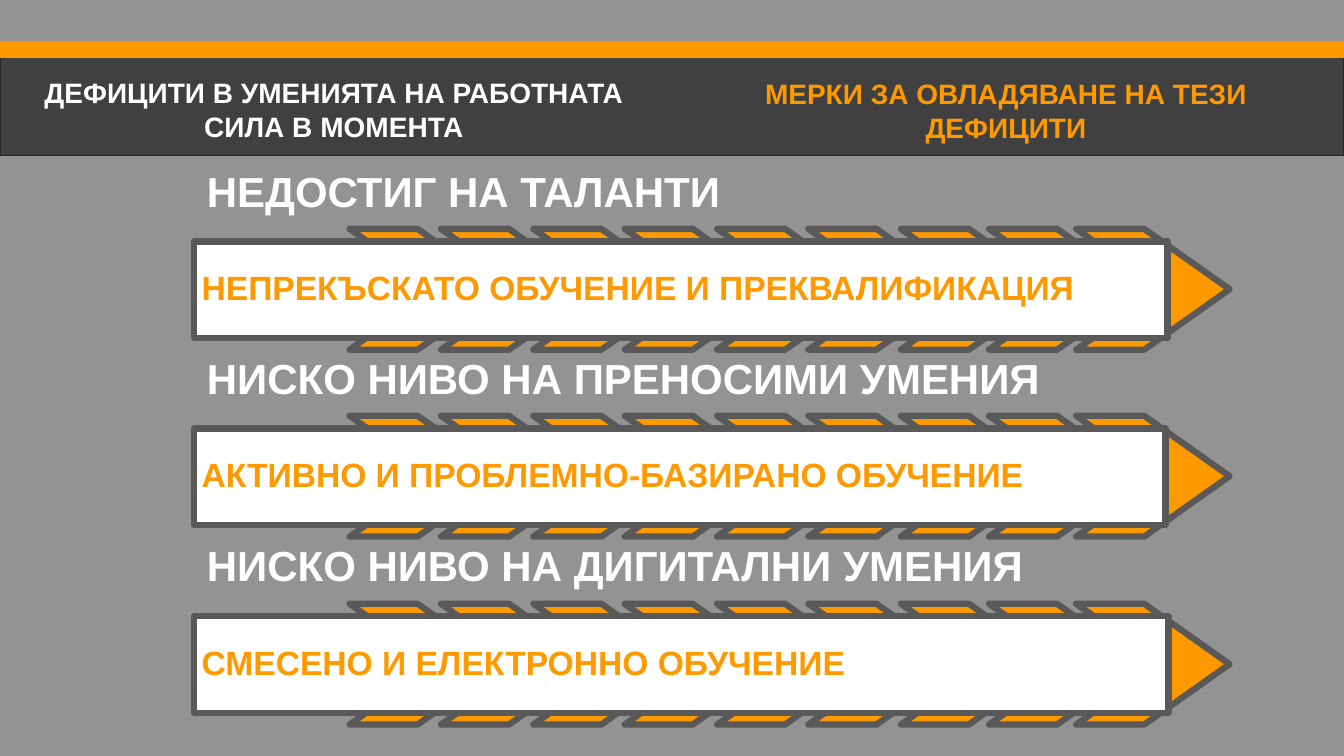
from pptx import Presentation
from pptx.dml.color import RGBColor
from pptx.enum.shapes import MSO_SHAPE
from pptx.enum.text import MSO_ANCHOR, PP_ALIGN
from pptx.util import Emu, Pt

PX = 9525  # EMU per px, 96 px to the inch

THEME = {
    "font": "Arial",
    "background": "939393",
    "orange": "FF9900",
    "white": "FFFFFF",
    "band": "404040",
    "band_edge": "262626",
    "outline": "595959",
    "header_size": 20,
    "measure_size": 24,
    "deficit_size": 30,
}


def add_box(slide, kind, left, top, width, height, fill, line, line_width):
    shape = slide.shapes.add_shape(
        kind, Emu(left * PX), Emu(top * PX), Emu(width * PX), Emu(height * PX))
    shape.shadow.inherit = False
    shape.fill.solid()
    shape.fill.fore_color.rgb = RGBColor.from_string(THEME[fill])
    shape.line.color.rgb = RGBColor.from_string(THEME[line])
    shape.line.width = Pt(line_width)
    return shape


def write_text(shape, text, *, size, color, align=PP_ALIGN.LEFT,
               anchor=MSO_ANCHOR.TOP, inset=(10, 5), spacing=1.0):
    frame = shape.text_frame
    frame.word_wrap = True
    frame.vertical_anchor = anchor
    frame.margin_left = frame.margin_right = Emu(inset[0] * PX)
    frame.margin_top = frame.margin_bottom = Emu(inset[1] * PX)
    paragraph = frame.paragraphs[0]
    paragraph.alignment = align
    paragraph.line_spacing = spacing
    run = paragraph.add_run()
    run.text = text
    run.font.name = THEME["font"]
    run.font.size = Pt(THEME[size])
    run.font.bold = True
    run.font.color.rgb = RGBColor.from_string(THEME[color])


presentation = Presentation()
presentation.slide_width = Emu(1280 * PX)
presentation.slide_height = Emu(720 * PX)
slide = presentation.slides.add_slide(presentation.slide_layouts[6])
slide.background.fill.solid()
slide.background.fill.fore_color.rgb = RGBColor.from_string(THEME["background"])

# Header band with its orange stripe
add_box(slide, MSO_SHAPE.RECTANGLE, 0, 40, 1280, 108, "band", "band_edge", 1)
add_box(slide, MSO_SHAPE.RECTANGLE, 0, 40, 1280, 15, "orange", "orange", 1)

# Header titles
headers = [
    ("ДЕФИЦИТИ В УМЕНИЯТА НА РАБОТНАТА СИЛА В МОМЕНТА", 0, 67, 636, "white"),
    ("МЕРКИ ЗА ОВЛАДЯВАНЕ НА ТЕЗИ ДЕФИЦИТИ", 652, 68, 612, "orange"),
]
for text, left, top, width, color in headers:
    header = slide.shapes.add_textbox(
        Emu(left * PX), Emu(top * PX), Emu(width * PX), Emu(74 * PX))
    write_text(header, text, size="header_size", color=color,
               align=PP_ALIGN.CENTER)

# Rows: deficit title, chevron strip, measure box on top
rows = [
    ("НЕДОСТИГ НА ТАЛАНТИ", "НЕПРЕКЪСКАТО ОБУЧЕНИЕ И ПРЕКВАЛИФИКАЦИЯ", 927),
    ("НИСКО НИВО НА ПРЕНОСИМИ УМЕНИЯ", "АКТИВНО И ПРОБЛЕМНО-БАЗИРАНО ОБУЧЕНИЕ", 925),
    ("НИСКО НИВО НА ДИГИТАЛНИ УМЕНИЯ", "СМЕСЕНО И ЕЛЕКТРОННО ОБУЧЕНИЕ", 928),
]
chevron_lefts = [333 + column * 175 // 2 for column in range(7)] + [942, 1025]

for index, (deficit, measure, measure_width) in enumerate(rows):
    row_top = 218 + index * 357 // 2

    title = slide.shapes.add_textbox(
        Emu(185 * PX), Emu((row_top - 57) * PX), Emu(948 * PX), Emu(57 * PX))
    write_text(title, deficit, size="deficit_size", color="white",
               anchor=MSO_ANCHOR.BOTTOM, inset=(12, 12), spacing=0.9)

    for left in chevron_lefts:
        chevron = add_box(slide, MSO_SHAPE.CHEVRON, left, row_top, 146, 115,
                          "orange", "outline", 4.5)
        chevron.adjustments[0] = 0.706

    measure_box = add_box(slide, MSO_SHAPE.RECTANGLE, 185, row_top + 12,
                          measure_width, 92, "white", "outline", 4.5)
    write_text(measure_box, measure, size="measure_size", color="orange",
               anchor=MSO_ANCHOR.MIDDLE, inset=(7, 7), spacing=0.9)

presentation.save("out.pptx")
